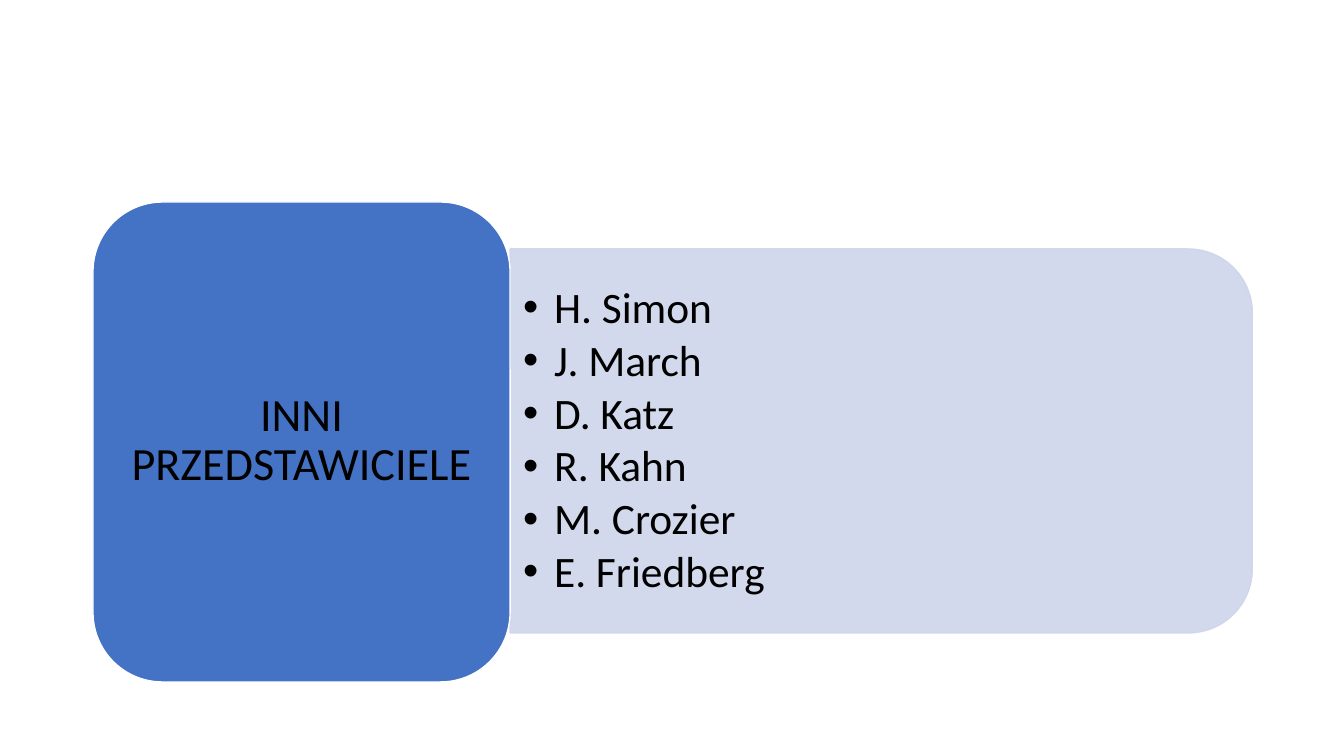
from lxml import etree
from pptx import Presentation, util as u
from pptx.dml.color import RGBColor
from pptx.enum import shapes, text
from pptx.oxml.ns import qn

BLUE = RGBColor(0x44, 0x72, 0xC4)
PALE_BLUE = RGBColor(0xCF, 0xD5, 0xEA)
WHITE = RGBColor(0xFF, 0xFF, 0xFF)
BLACK = RGBColor(0, 0, 0)
PX_PER_INCH = 100.8


def px(length):
    return u.Emu(round(length * 914400 / PX_PER_INCH))


class SlideBuilder:
    """Holds the text style and the current slide."""

    def __init__(self, slide, font="Calibri", color=BLACK):
        self.slide = slide
        self.font = font
        self.color = color

    def block(self, kind, left, top, width, height, fill, line, opacity=100):
        shape = self.slide.shapes.add_shape(
            kind, px(left), px(top), px(width), px(height))
        shape.shadow.inherit = False
        shape.fill.solid()
        shape.fill.fore_color.rgb = fill
        shape.line.color.rgb = line
        shape.line.width = u.Pt(1)
        if opacity < 100:
            for color in shape._element.spPr.iter(qn("a:srgbClr")):
                etree.SubElement(color, qn("a:alpha"), val=str(opacity * 1000))
        return shape

    def text_box(self, lines, left, top, width, height, size, margins,
                 align=text.PP_ALIGN.LEFT, space_after=0, indent=0):
        shape = self.slide.shapes.add_textbox(
            px(left), px(top), px(width), px(height))
        frame = shape.text_frame
        frame.text = "\n".join(lines)
        frame.word_wrap = True
        frame.vertical_anchor = text.MSO_ANCHOR.MIDDLE
        frame.margin_left = frame.margin_right = px(margins[0])
        frame.margin_top = frame.margin_bottom = px(margins[1])
        for paragraph in frame.paragraphs:
            paragraph.alignment = align
            paragraph.line_spacing = 0.9
            paragraph.space_after = u.Pt(space_after)
            if indent:
                self.bullet(paragraph, indent)
            for run in paragraph.runs:
                run.font.name = self.font
                run.font.size = u.Pt(size)
                run.font.color.rgb = self.color

    def bullet(self, paragraph, indent):
        properties = paragraph._p.get_or_add_pPr()
        properties.set("marL", str(px(indent)))
        properties.set("indent", str(-px(indent)))
        etree.SubElement(properties, qn("a:buFont"), typeface="Arial")
        etree.SubElement(properties, qn("a:buChar"), char="•")


def main():
    presentation = Presentation()
    presentation.slide_width = u.Inches(13.33)
    presentation.slide_height = u.Inches(7.5)
    slide = presentation.slides.add_slide(presentation.slide_layouts[6])
    builder = SlideBuilder(slide)

    # Panel with the names, turned so its round corners face right
    panel = builder.block(shapes.MSO_SHAPE.ROUND_2_SAME_RECTANGLE,
                          689, 70, 384, 742, PALE_BLUE, PALE_BLUE, opacity=90)
    panel.rotation = 90
    names = ["H. Simon", "J. March", "D. Katz",
             "R. Kahn", "M. Crozier", "E. Friedberg"]
    builder.text_box(names, 510, 268, 723, 347, size=31, margins=(13, 6),
                     space_after=4.2, indent=31)

    # Heading block
    builder.block(shapes.MSO_SHAPE.ROUNDED_RECTANGLE,
                  93, 202, 417, 480, BLUE, WHITE)
    builder.text_box(["INNI PRZEDSTAWICIELE"], 113, 222, 377, 438, size=33,
                     margins=(14, 7), align=text.PP_ALIGN.CENTER)

    presentation.save("out.pptx")


if __name__ == "__main__":
    main()
